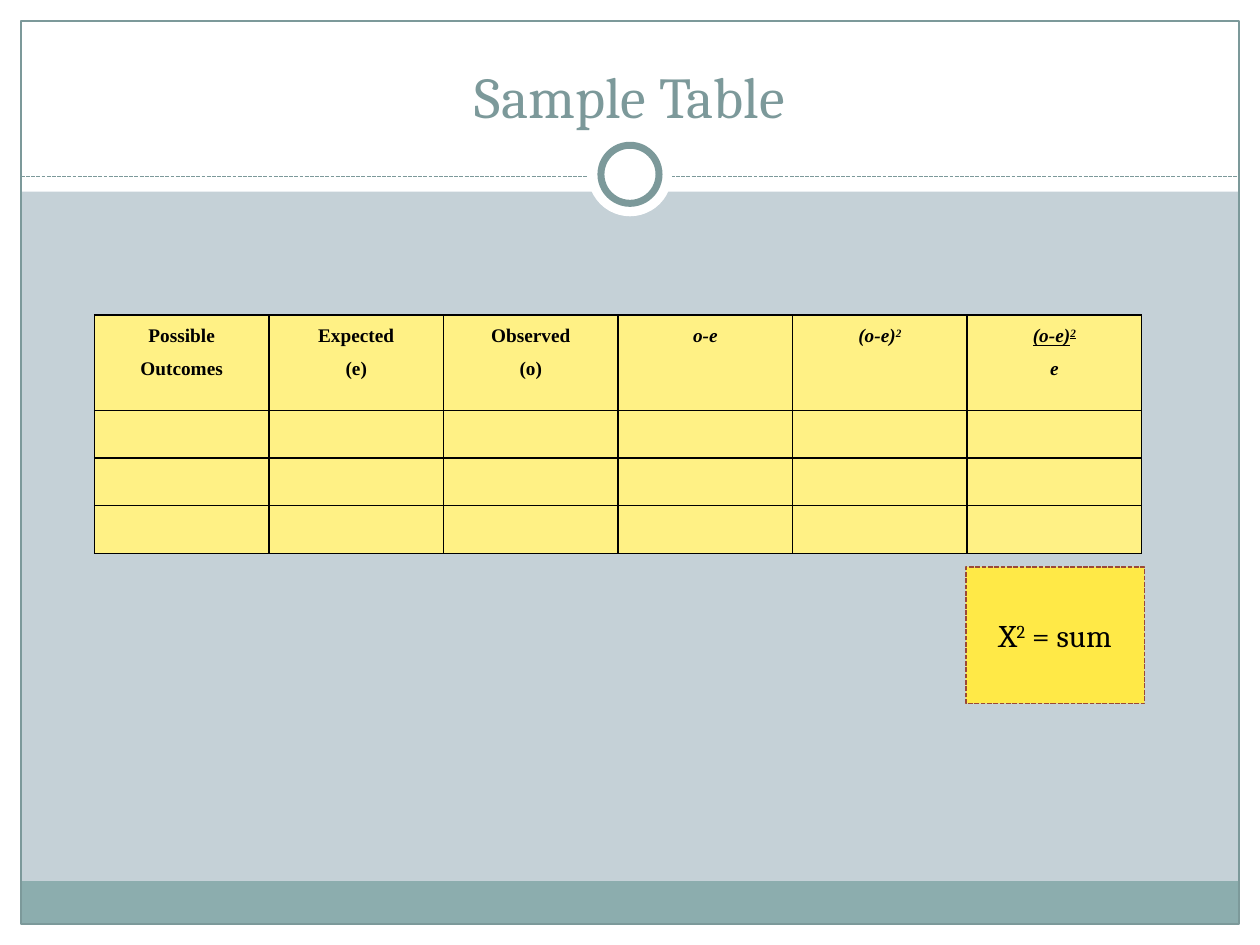
from dataclasses import dataclass
from typing import Optional

from lxml.etree import SubElement
from pptx import Presentation
from pptx.dml.color import RGBColor
from pptx.enum.dml import MSO_LINE
from pptx.enum.shapes import MSO_CONNECTOR, MSO_SHAPE
from pptx.enum.text import MSO_ANCHOR, MSO_AUTO_SIZE, PP_ALIGN
from pptx.oxml import parse_xml
from pptx.oxml.ns import nsdecls, qn
from pptx.util import Pt

COLORS = {
    "background": "C5D1D7",
    "white": "FFFFFF",
    "footer": "8CADAE",
    "teal": "7C999A",
    "cell": "FFF185",
    "sum": "FFE947",
    "sum_edge": "9B4936",
    "black": "000000",
}
WIDTH, HEIGHT, MARGIN = 720, 540, 12


@dataclass(frozen=True)
class Panel:
    left: float
    top: float
    width: float
    height: float
    fill: Optional[str] = None
    edge: Optional[str] = None
    weight: float = 0.75
    dash: Optional[MSO_LINE] = None
    outline: MSO_SHAPE = MSO_SHAPE.RECTANGLE


@dataclass(frozen=True)
class Heading:
    lines: tuple[str, ...]
    italic: bool = False
    underlined_lines: int = 0


DECORATION = (
    Panel(0, HEIGHT - MARGIN, WIDTH, MARGIN, "white"),
    Panel(0, 0, WIDTH, 109.5, "white"),
    Panel(0, 0, MARGIN, HEIGHT, "white"),
    Panel(WIDTH - MARGIN, 0, MARGIN, HEIGHT, "white"),
    Panel(MARGIN, 503.5, WIDTH - 2 * MARGIN, 24.5, "footer"),
    Panel(MARGIN, MARGIN, WIDTH - 2 * MARGIN, HEIGHT - 2 * MARGIN, edge="teal"),
)
MEDALLION = (
    Panel(336, 75.6, 48, 48, "white", outline=MSO_SHAPE.OVAL),
    Panel(343.4, 83, 33.2, 33.2, "white", "teal", 4, outline=MSO_SHAPE.OVAL),
)
SUM_BOX = Panel(552, 324, 102, 78, "sum", "sum_edge", 0.9, MSO_LINE.SQUARE_DOT)

HEADINGS = (
    Heading(("Possible", "Outcomes")),
    Heading(("Expected", "(e)")),
    Heading(("Observed", "(o)")),
    Heading(("o-e",), italic=True),
    Heading(("(o-e)^2",), italic=True),
    Heading(("(o-e)^2", "e"), italic=True, underlined_lines=1),
)
TABLE_LEFT, TABLE_TOP, COLUMN_WIDTH = 54, 180, 99.75
ROW_HEIGHTS = (54.6, 27.2, 27.2, 27.2)


def color(name: str) -> RGBColor:
    return RGBColor.from_string(COLORS[name])


def draw_panel(slide, panel: Panel):
    shape = slide.shapes.add_shape(
        panel.outline, Pt(panel.left), Pt(panel.top), Pt(panel.width), Pt(panel.height)
    )
    shape.shadow.inherit = False
    if panel.fill:
        shape.fill.solid()
        shape.fill.fore_color.rgb = color(panel.fill)
    else:
        shape.fill.background()
    if panel.edge:
        shape.line.color.rgb = color(panel.edge)
        shape.line.width = Pt(panel.weight)
        if panel.dash:
            shape.line.dash_style = panel.dash
    else:
        shape.line.fill.background()
    return shape


def draw_divider(slide, y: float) -> None:
    divider = slide.shapes.add_connector(
        MSO_CONNECTOR.STRAIGHT, Pt(MARGIN), Pt(y), Pt(WIDTH - MARGIN), Pt(y)
    )
    divider.line.color.rgb = color("teal")
    divider.line.width = Pt(0.75)
    divider.line.dash_style = MSO_LINE.SQUARE_DOT
    SubElement(divider._element.spPr, qn("a:effectLst"))


def style_paragraph(paragraph, font_name: str, size: float, color_name: str) -> None:
    paragraph.alignment = PP_ALIGN.CENTER
    paragraph.font.name = font_name
    paragraph.font.size = Pt(size)
    paragraph.font.color.rgb = color(color_name)


def write_formula(paragraph, text: str) -> None:
    base, caret, rest = text.partition("^")
    paragraph.add_run().text = base
    if caret:
        exponent = paragraph.add_run()
        exponent.text = rest[0]
        exponent._r.get_or_add_rPr().set("baseline", "30000")
        if rest[1:]:
            paragraph.add_run().text = rest[1:]


def style_cell(cell) -> None:
    cell.fill.solid()
    cell.fill.fore_color.rgb = color("cell")
    cell.margin_left = cell.margin_right = Pt(5)
    cell.margin_top = cell.margin_bottom = Pt(0)
    properties = cell._tc.get_or_add_tcPr()
    for position, side in enumerate(("lnL", "lnR", "lnT", "lnB")):
        border = parse_xml(
            f'<a:{side} {nsdecls("a")} w="{Pt(1)}"><a:solidFill>'
            f'<a:srgbClr val="{COLORS["black"]}"/></a:solidFill></a:{side}>'
        )
        properties.insert(position, border)


def write_heading(cell, heading: Heading) -> None:
    for index, line in enumerate(heading.lines):
        frame = cell.text_frame
        paragraph = frame.add_paragraph() if index else frame.paragraphs[0]
        write_formula(paragraph, line)
        style_paragraph(paragraph, "Times New Roman", 11, "black")
        paragraph.line_spacing = 1.5
        paragraph.font.bold = True
        if heading.italic:
            paragraph.font.italic = True
        if index < heading.underlined_lines:
            for run in paragraph.runs:
                run.font.underline = True


def draw_table(slide) -> None:
    outcomes = slide.shapes.add_table(
        len(ROW_HEIGHTS), len(HEADINGS), Pt(TABLE_LEFT), Pt(TABLE_TOP),
        Pt(COLUMN_WIDTH * len(HEADINGS)), Pt(sum(ROW_HEIGHTS)),
    ).table
    for column in outcomes.columns:
        column.width = Pt(COLUMN_WIDTH)
    for row, height in zip(outcomes.rows, ROW_HEIGHTS):
        row.height = Pt(height)
        for cell in row.cells:
            style_cell(cell)
            cell.text_frame.paragraphs[0].font.size = Pt(11)
    for cell, heading in zip(outcomes.rows[0].cells, HEADINGS):
        write_heading(cell, heading)


def draw_title(slide) -> None:
    title = slide.shapes.title
    title.left, title.top, title.width, title.height = Pt(24), Pt(18), Pt(672), Pt(60)
    title.text_frame.text = "Sample Table"
    title.text_frame.auto_size = MSO_AUTO_SIZE.NONE
    title.text_frame.vertical_anchor = MSO_ANCHOR.BOTTOM
    style_paragraph(title.text_frame.paragraphs[0], "Cambria", 33, "teal")
    slide.shapes._spTree.append(title._element)


def main() -> None:
    presentation = Presentation()
    presentation.slide_width, presentation.slide_height = Pt(WIDTH), Pt(HEIGHT)
    slide = presentation.slides.add_slide(presentation.slide_layouts[5])
    slide.background.fill.solid()
    slide.background.fill.fore_color.rgb = color("background")
    for panel in DECORATION:
        draw_panel(slide, panel)
    draw_divider(slide, 100.8)
    for ring in MEDALLION:
        draw_panel(slide, ring)
    draw_title(slide)
    draw_table(slide)
    sum_text = draw_panel(slide, SUM_BOX).text_frame
    sum_text.vertical_anchor = MSO_ANCHOR.MIDDLE
    write_formula(sum_text.paragraphs[0], "X^2 = sum")
    style_paragraph(sum_text.paragraphs[0], "Cambria", 18, "black")
    presentation.save("out.pptx")


if __name__ == "__main__":
    main()
